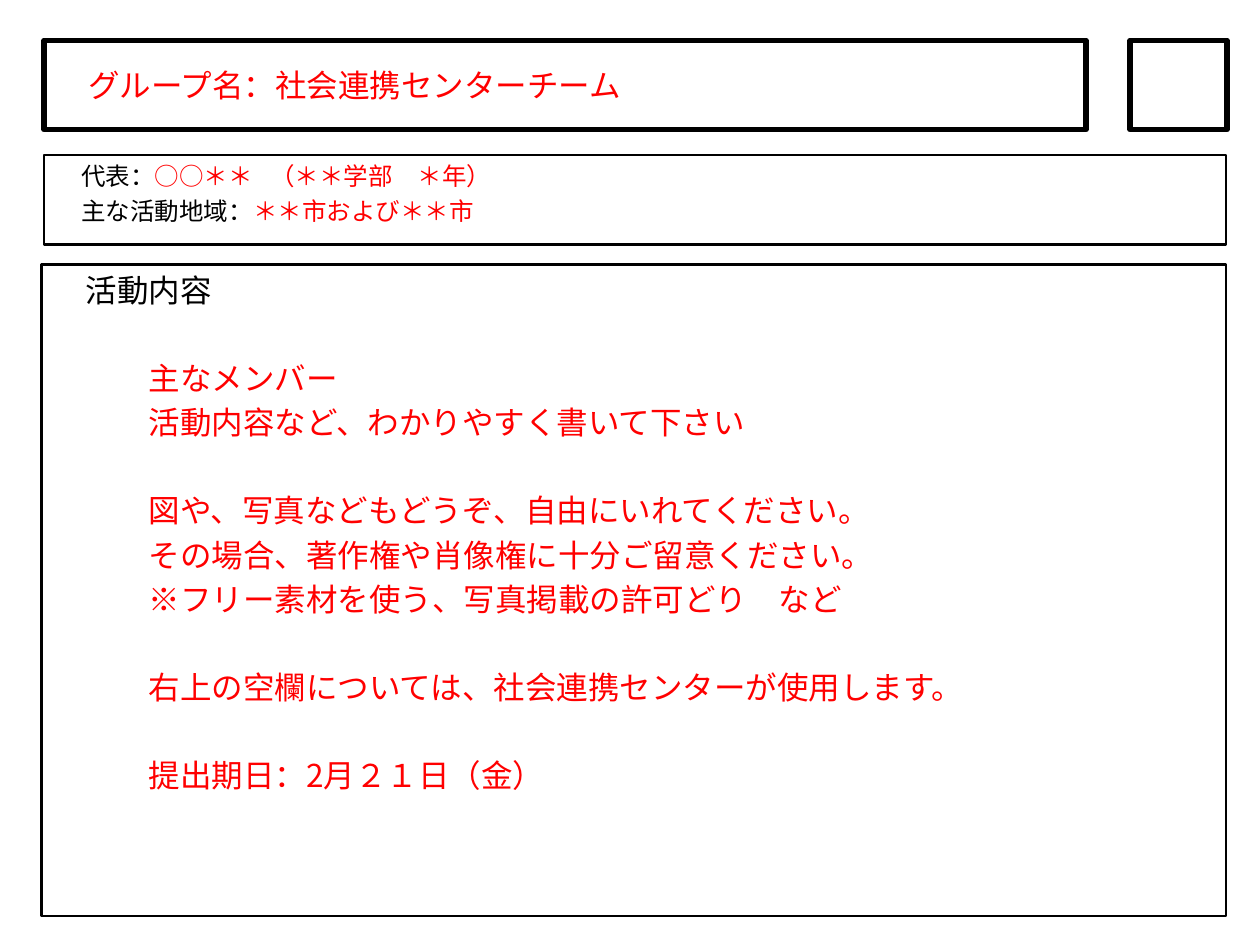
from lxml.etree import SubElement
from pptx import Presentation
from pptx.dml.color import RGBColor
from pptx.enum.shapes import MSO_SHAPE
from pptx.enum.text import MSO_ANCHOR, MSO_AUTO_SIZE, PP_ALIGN
from pptx.oxml.ns import qn
from pptx.util import Pt

THEME = {
    "font": "Noto Sans CJK JP",
    "ink": RGBColor(0, 0, 0),
    "sample": RGBColor(255, 0, 0),
    "paper": RGBColor(255, 255, 255),
    "large": 18,
    "small": 14,
    "thick": 3,
    "thin": 1.5,
    "leading": 1.2,
    "before": 0.2,
}

GROUP_NAME = "グループ名：社会連携センターチーム"
PROFILE = [
    ("代表：", "○○＊＊\t（＊＊学部　＊年）"),
    ("主な活動地域：", "＊＊市および＊＊市"),
]
ACTIVITY_HEADING = "活動内容"
ACTIVITY_GROUPS = [
    ["主なメンバー", "活動内容など、わかりやすく書いて下さい"],
    [
        "図や、写真などもどうぞ、自由にいれてください。",
        "その場合、著作権や肖像権に十分ご留意ください。",
        "※フリー素材を使う、写真掲載の許可どり　など",
    ],
    ["右上の空欄については、社会連携センターが使用します。"],
    ["提出期日：2月２１日（金）"],
]

BOXES = {
    "group": (25.2, 23, 595.4, 51.1),
    "stamp": (645.8, 23, 55.4, 51.1),
    "profile": (25.2, 88.6, 675.4, 51.1),
    "activity": (23.8, 151.2, 676.8, 372.2),
}


def format_box(shape, box, line_width, size, anchor=MSO_ANCHOR.TOP, filled=True):
    shape.left, shape.top, shape.width, shape.height = map(Pt, box)
    if filled:
        shape.fill.solid()
        shape.fill.fore_color.rgb = THEME["paper"]
    else:
        shape.fill.background()
    shape.line.color.rgb = THEME["ink"]
    shape.line.width = Pt(line_width)
    frame = shape.text_frame
    frame.auto_size = MSO_AUTO_SIZE.NONE
    frame.word_wrap = True
    frame.vertical_anchor = anchor
    frame.margin_left = Pt(7.2 + size)
    frame.margin_right = Pt(7.2)
    frame.margin_top = frame.margin_bottom = Pt(3.6)
    return frame


def add_rectangle(slide, box):
    shape = slide.shapes.add_shape(MSO_SHAPE.RECTANGLE, *map(Pt, box))
    shape.shadow.inherit = False
    return shape


def add_text(paragraph, text, size, color):
    run = paragraph.add_run()
    run.text = text
    run.font.size = Pt(size)
    run.font.name = THEME["font"]
    run.font.color.rgb = color
    SubElement(run.font._element, qn("a:ea"), typeface=THEME["font"])


def write_line(frame, parts, size, index, indent=0, gap_lines=0, tab=None):
    paragraph = frame.add_paragraph() if index else frame.paragraphs[0]
    leading = size * THEME["leading"]
    before = size * THEME["before"]
    paragraph.alignment = PP_ALIGN.LEFT
    paragraph.line_spacing = Pt(leading)
    paragraph.space_before = Pt(before + gap_lines * (leading + before) if index else 0)
    properties = paragraph._p.get_or_add_pPr()
    properties.set("marL", str(Pt(indent)))
    properties.set("indent", "0")
    SubElement(properties, qn("a:buNone"))
    if tab:
        tabs = SubElement(properties, qn("a:tabLst"))
        SubElement(tabs, qn("a:tab"), pos=str(Pt(tab)), algn="l")
    for text, color in parts:
        add_text(paragraph, text, size, color)


def main():
    presentation = Presentation()
    presentation.slide_width, presentation.slide_height = Pt(720), Pt(540)
    slide = presentation.slides.add_slide(presentation.slide_layouts[1])
    title, body = slide.placeholders
    large, small = THEME["large"], THEME["small"]

    frame = format_box(title, BOXES["group"], THEME["thick"], large,
                       anchor=MSO_ANCHOR.MIDDLE, filled=False)
    write_line(frame, [(GROUP_NAME, THEME["sample"])], large, 0)

    frame = format_box(body, BOXES["activity"], THEME["thin"], large)
    write_line(frame, [(ACTIVITY_HEADING, THEME["ink"])], large, 0)
    for group in ACTIVITY_GROUPS:
        for position, text in enumerate(group):
            write_line(frame, [(text, THEME["sample"])], large, 1,
                       indent=2 * large, gap_lines=int(position == 0))

    stamp = add_rectangle(slide, BOXES["stamp"])
    format_box(stamp, BOXES["stamp"], THEME["thick"], large, filled=False)

    profile = add_rectangle(slide, BOXES["profile"])
    frame = format_box(profile, BOXES["profile"], THEME["thin"], small)
    for index, (label, value) in enumerate(PROFILE):
        write_line(frame, [(label, THEME["ink"]), (value, THEME["sample"])],
                   small, index, tab=9 * small)

    presentation.save("out.pptx")


if __name__ == "__main__":
    main()
